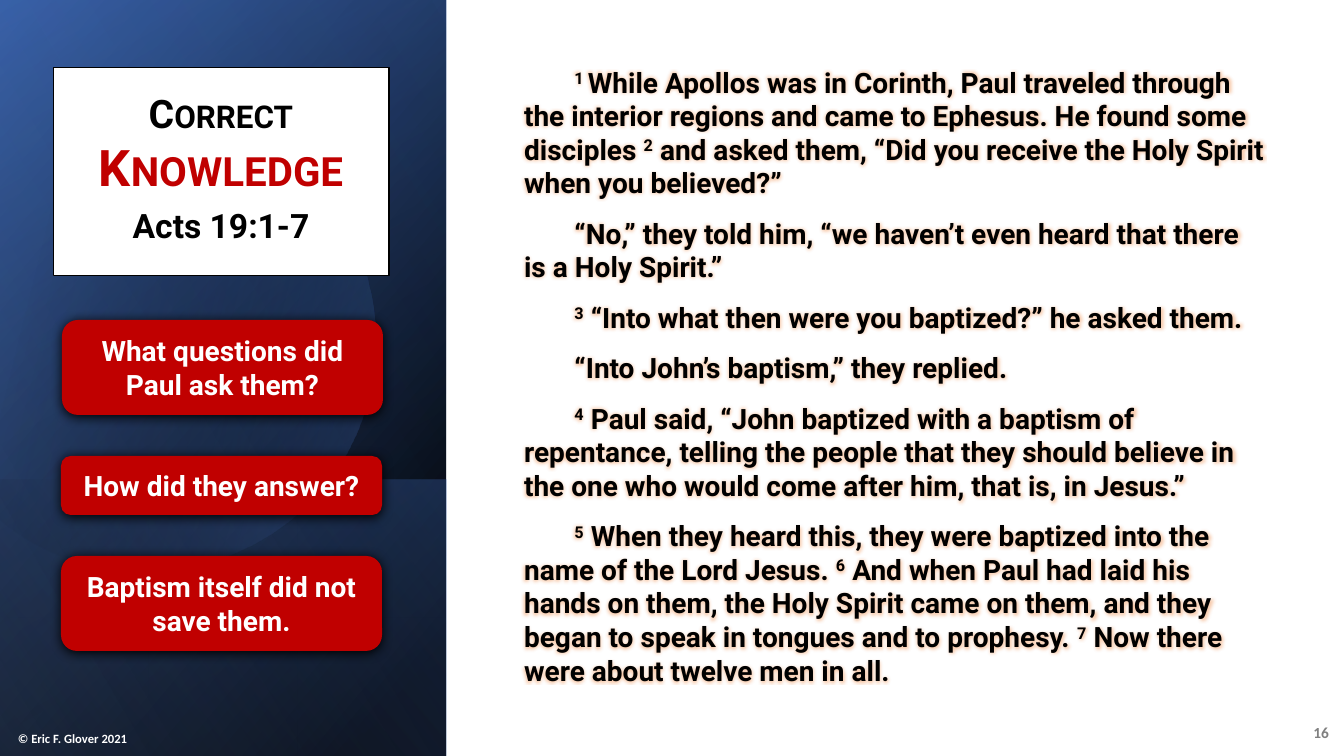
import math
import pptx
import pptx.util
import pptx.dml.color
import pptx.enum.shapes
import pptx.enum.text
import pptx.oxml
import pptx.oxml.ns
import lxml.etree

PX = 12192000 / 1344
COLORS = {"white": "FFFFFF", "black": "000000", "red": "C00000", "gray": "808080",
          "navy": "2F5597", "blue": "4472C4", "sky": "8FAADC", "glow": "ED7D31"}
NS = 'xmlns:a="http://schemas.openxmlformats.org/drawingml/2006/main"'
ALIGN = pptx.enum.text.PP_ALIGN
ANCHOR = pptx.enum.text.MSO_ANCHOR
SHAPE = pptx.enum.shapes.MSO_SHAPE
qn = pptx.oxml.ns.qn


def style(span, size, color, font="Roboto"):
    span.font.size = pptx.util.Pt(size)
    span.font.bold = True
    span.font.name = font
    span.font.color.rgb = pptx.dml.color.RGBColor.from_string(COLORS[color])


def paint(shape, stops, angle):
    """Fill with a linear gradient of (position, color, opacity) stops."""
    marks = "".join(
        f'<a:gs pos="{pos * 1000}"><a:srgbClr val="{COLORS[color]}">'
        f'<a:alpha val="{alpha * 1000}"/></a:srgbClr></a:gs>' for pos, color, alpha in stops)
    shape.shadow.inherit = False
    shape.line.fill.background()
    shape.fill.background()
    blank = shape.element.spPr.find(qn("a:noFill"))
    blank.getparent().replace(blank, pptx.oxml.parse_xml(
        f'<a:gradFill {NS} rotWithShape="1"><a:gsLst>{marks}</a:gsLst>'
        f'<a:lin ang="{angle * 60000}" scaled="0"/></a:gradFill>'))


deck = pptx.Presentation()
deck.slide_width, deck.slide_height = round(1344 * PX), round(756 * PX)
page = deck.slides.add_slide(deck.slide_layouts[1])
title, body = page.placeholders

# White backdrop
backdrop = page.shapes.add_shape(SHAPE.RECTANGLE, 0, 0, deck.slide_width, deck.slide_height)
backdrop.shadow.inherit = False
backdrop.fill.solid()
backdrop.fill.fore_color.rgb = pptx.dml.color.RGBColor.from_string(COLORS["white"])
backdrop.line.fill.background()

# Left panel: gradient layers lying on their side, with a disc under the last one
PANEL = 446
layers = [
    (0, 756, [(8, "black", 100), (100, "navy", 100)], 50),
    (0, 756, [(0, "black", 0), (99, "blue", 46)], 30),
    (480, 276, [(2, "blue", 29), (100, "black", 30)], 130),
    (0, 756, [(0, "black", 0), (99, "sky", 11)], 120),
]
for number, (top, height, stops, angle) in enumerate(layers):
    if number == 3:
        # Disc, cut off beyond the left edge of the slide
        outline = [(150, 111)]
        for segment in [
            [(248, 113), (338, 178), (366, 277)], [(401, 400), (331, 527), (209, 562)],
            [(132, 585), (53, 566), (-3, 518)], [(-15, 507)], [(-15, 176)], [(0, 162)],
            [(23, 143), (50, 129), (81, 120)], [(104, 114), (127, 111), (150, 111)],
        ]:
            if len(segment) == 1:
                outline += segment
                continue
            curve = [outline[-1]] + segment
            for step in range(1, 17):
                t = step / 16
                weights = [math.comb(3, k) * t ** k * (1 - t) ** (3 - k) for k in range(4)]
                outline.append(tuple(sum(w * point[axis] for w, point in zip(weights, curve))
                                     for axis in (0, 1)))
        tilt = math.radians(16.1)
        turned = []
        for x, y in outline:
            dx, dy = x - 160, y - 337
            turned.append(((160 + dx * math.cos(tilt) - dy * math.sin(tilt)) * PX,
                           (337 + dx * math.sin(tilt) + dy * math.cos(tilt)) * PX))
        builder = page.shapes.build_freeform(*turned[0])
        builder.add_line_segments(turned[1:], close=True)
        disc = builder.convert_to_shape()
        disc.rotation = 343.9
        paint(disc, [(29, "black", 0), (100, "blue", 43)], 30)
    layer = page.shapes.add_shape(
        SHAPE.RECTANGLE, round((PANEL - height) / 2 * PX), round((top + (height - PANEL) / 2) * PX),
        round(height * PX), round(PANEL * PX))
    layer.rotation = 90
    layer.element.spPr.xfrm.set("flipH", "1")
    paint(layer, stops, angle)

# Slide number and copyright line
for text, place, size, color, align, anchor, after in [
    ("16", (1290, 712, 49, 40), 11, "gray", ALIGN.RIGHT, ANCHOR.MIDDLE, 6),
    ("© Eric F. Glover 2021", (8, 723, 158, 28), 9, "white", ALIGN.LEFT, ANCHOR.BOTTOM, 0),
]:
    box = page.shapes.add_textbox(*[round(v * PX) for v in place])
    box.text_frame.word_wrap = True
    box.text_frame.vertical_anchor = anchor
    para = box.text_frame.paragraphs[0]
    para.text = text
    para.alignment = align
    para.space_after = pptx.util.Pt(after)
    style(para.runs[0], size, color, "Calibri")

# Scripture passage; verse numbers stand between carets
verses = [
    "^1 ^While Apollos was in Corinth, Paul traveled through the interior regions and came to "
    "Ephesus. He found some disciples ^2^ and asked them, “Did you receive the Holy Spirit when "
    "you believed?”",
    "“No,” they told him, “we haven’t even heard that there is a Holy Spirit.”",
    "^3^ “Into what then were you baptized?” he asked them.",
    "“Into John’s baptism,” they replied.",
    "^4^ Paul said, “John baptized with a baptism of repentance, telling the people that they "
    "should believe in the one who would come after him, that is, in Jesus.”",
    "^5^ When they heard this, they were baptized into the name of the Lord Jesus. ^6^ And when "
    "Paul had laid his hands on them, the Holy Spirit came on them, and they began to speak in "
    "tongues and to prophesy. ^7^ Now there were about twelve men in all.",
]
page.shapes.element.append(body.element)
body.left, body.top, body.width, body.height = [round(v * PX) for v in (514, 60, 761, 638)]
frame = body.text_frame
frame.auto_size = pptx.enum.text.MSO_AUTO_SIZE.SHAPE_TO_FIT_TEXT
for number, verse in enumerate(verses):
    para = frame.add_paragraph() if number else frame.paragraphs[0]
    para.line_spacing = 1.0
    para.space_before, para.space_after = pptx.util.Pt(0), pptx.util.Pt(12)
    layout = para._p.get_or_add_pPr()
    layout.set("marL", "0")
    layout.set("indent", "457200")
    lxml.etree.SubElement(layout, qn("a:buNone"))
    for part, text in enumerate(verse.split("^")):
        if not text:
            continue
        span = para.add_run()
        span.text = text
        style(span, 20, "black")
        look = span._r.get_or_add_rPr()
        if part % 2:
            look.set("baseline", "30000")
        look.find(qn("a:solidFill")).addnext(pptx.oxml.parse_xml(
            f'<a:effectLst {NS}><a:glow rad="63500"><a:srgbClr val="{COLORS["glow"]}">'
            '<a:alpha val="40000"/></a:srgbClr></a:glow></a:effectLst>'))

# Title card
page.shapes.element.append(title.element)
title.left, title.top, title.width, title.height = [round(v * PX) for v in (53, 68, 336, 208)]
title.element.spPr.append(pptx.oxml.parse_xml(
    f'<a:prstGeom {NS} prst="roundRect"><a:avLst/></a:prstGeom>'))
title.fill.solid()
title.fill.fore_color.rgb = pptx.dml.color.RGBColor.from_string(COLORS["white"])
title.line.color.rgb = pptx.dml.color.RGBColor.from_string(COLORS["black"])
title.line.width = pptx.util.Pt(0.75)
frame = title.text_frame
frame.auto_size = pptx.enum.text.MSO_AUTO_SIZE.NONE
frame.vertical_anchor = ANCHOR.MIDDLE
frame.margin_left = frame.margin_right = frame.margin_top = 0
frame.margin_bottom = round(10 * PX)
frame.text = "Correct\vKnowledge\nActs 19:1-7"
heading, reference = frame.paragraphs
for para in frame.paragraphs:
    para.alignment = ALIGN.CENTER
    para.space_after = pptx.util.Pt(6)
for span, size, color in zip(heading.runs + reference.runs, (28, 36, 24), ("black", "red", "black")):
    style(span, size, color)
for span in heading.runs:
    span._r.get_or_add_rPr().set("cap", "small")
lxml.etree.SubElement(heading._p.find(qn("a:br")), qn("a:rPr")).set("sz", "2800")

# Red question cards
for text, left, top, height in [
    ("Baptism itself did not save them.", 61, 556, 95),
    ("What questions did Paul ask them?", 62, 320, 95),
    ("How did they answer?", 61, 456, 59),
]:
    card = page.shapes.add_shape(SHAPE.ROUNDED_RECTANGLE,
                                 *[round(v * PX) for v in (left, top, 321, height)])
    card.fill.solid()
    card.fill.fore_color.rgb = pptx.dml.color.RGBColor.from_string(COLORS["red"])
    card.line.fill.background()
    card.shadow.inherit = False
    card.element.spPr.find(qn("a:effectLst")).append(pptx.oxml.parse_xml(
        f'<a:outerShdw {NS} blurRad="107950" dist="12700" dir="5400000" algn="t" '
        f'rotWithShape="0"><a:srgbClr val="{COLORS["black"]}"/></a:outerShdw>'))
    card.text_frame.word_wrap = True
    card.text_frame.vertical_anchor = ANCHOR.MIDDLE
    para = card.text_frame.paragraphs[0]
    para.text = text
    para.alignment = ALIGN.CENTER
    style(para.runs[0], 20, "white")

deck.save("out.pptx")
